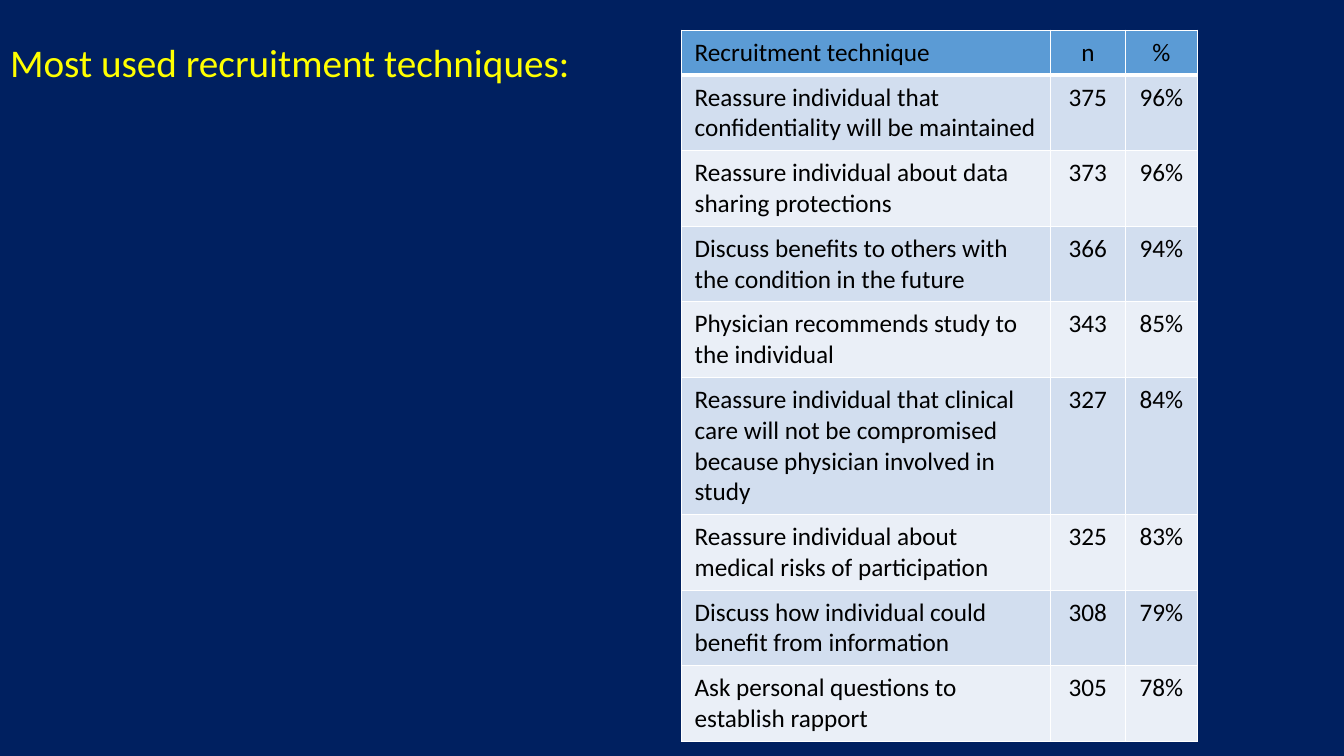
from dataclasses import dataclass

import pptx
import pptx.dml.color
import pptx.enum.text
import pptx.oxml.ns
import pptx.util
from lxml import etree
from pptx.util import Inches

FONT = "Calibri"
BLACK, WHITE, YELLOW, NAVY = "000000", "FFFFFF", "FFFF00", "002060"
HEADER_FILL = "5B9BD5"
BAND_FILLS = ("D2DEEF", "EAEFF7")
COLUMN_WIDTHS = (3.66, 0.74, 0.72)
ALIGN = pptx.enum.text.PP_ALIGN
ANCHOR = pptx.enum.text.MSO_ANCHOR


@dataclass
class Row:
    technique: str
    n: str
    percent: str
    height: float = 0.67


ROWS = [
    Row("Recruitment technique", "n", "%", 0.39),
    Row("Reassure individual that confidentiality will be maintained", "375", "96%"),
    Row("Reassure individual about data sharing protections", "373", "96%"),
    Row("Discuss benefits to others with the condition in the future", "366", "94%"),
    Row("Physician recommends study to the individual", "343", "85%"),
    Row("Reassure individual that clinical care will not be compromised "
        "because physician involved in study", "327", "84%", 0.94),
    Row("Reassure individual about medical risks of participation", "325", "83%"),
    Row("Discuss how individual could benefit from information", "308", "79%"),
    Row("Ask personal questions to establish rapport", "305", "78%"),
]


def rgb(color: str) -> pptx.dml.color.RGBColor:
    return pptx.dml.color.RGBColor.from_string(color)


def format_text(p, size: float, color: str, align) -> None:
    p.alignment = align
    for r in p.runs:
        r.font.name = FONT
        r.font.size = pptx.util.Pt(size)
        r.font.bold = False
        r.font.color.rgb = rgb(color)


def set_borders(cell, bottom: float) -> None:
    qn = pptx.oxml.ns.qn
    tc_pr = cell._tc.get_or_add_tcPr()
    for side, width in (("L", 1), ("R", 1), ("T", 1), ("B", bottom)):
        ln = etree.SubElement(tc_pr, qn(f"a:ln{side}"), w=str(pptx.util.Pt(width)))
        fill = etree.SubElement(ln, qn("a:solidFill"))
        etree.SubElement(fill, qn("a:srgbClr"), val=WHITE)


def fill_cell(cell, text: str, fill: str, align, bottom: float) -> None:
    set_borders(cell, bottom)
    cell.fill.solid()
    cell.fill.fore_color.rgb = rgb(fill)
    cell.margin_left = cell.margin_right = Inches(0.13)
    cell.margin_top = cell.margin_bottom = Inches(0.07)
    cell.text_frame.text = text
    format_text(cell.text_frame.paragraphs[0], 18, BLACK, align)


def add_title(s) -> None:
    title = s.shapes.title
    title.left, title.top = Inches(0), Inches(0.02)
    title.width, title.height = Inches(9.95), Inches(1.25)
    tf = title.text_frame
    tf.text = "Most used recruitment techniques:"
    tf.vertical_anchor = ANCHOR.MIDDLE
    p = tf.paragraphs[0]
    p.line_spacing = 0.9
    format_text(p, 28, YELLOW, ALIGN.LEFT)


def add_techniques_table(s) -> None:
    frame = s.shapes.add_table(len(ROWS), len(COLUMN_WIDTHS), Inches(6.76), Inches(0.3),
                               Inches(sum(COLUMN_WIDTHS)),
                               Inches(sum(row.height for row in ROWS)))
    table = frame.table
    for column, width in zip(table.columns, COLUMN_WIDTHS):
        column.width = Inches(width)
    for i, row in enumerate(ROWS):
        table.rows[i].height = Inches(row.height)
        fill = BAND_FILLS[(i - 1) % 2] if i else HEADER_FILL
        for j, text in enumerate((row.technique, row.n, row.percent)):
            align = ALIGN.CENTER if j else ALIGN.LEFT
            fill_cell(table.cell(i, j), text, fill, align, 1 if i else 3)


def main() -> None:
    prs = pptx.Presentation()
    prs.slide_width, prs.slide_height = Inches(13.33), Inches(7.5)
    s = prs.slides.add_slide(prs.slide_layouts[5])

    # Background
    s.background.fill.solid()
    s.background.fill.fore_color.rgb = rgb(NAVY)

    # Title and table
    add_title(s)
    add_techniques_table(s)
    prs.save("out.pptx")


if __name__ == "__main__":
    main()
